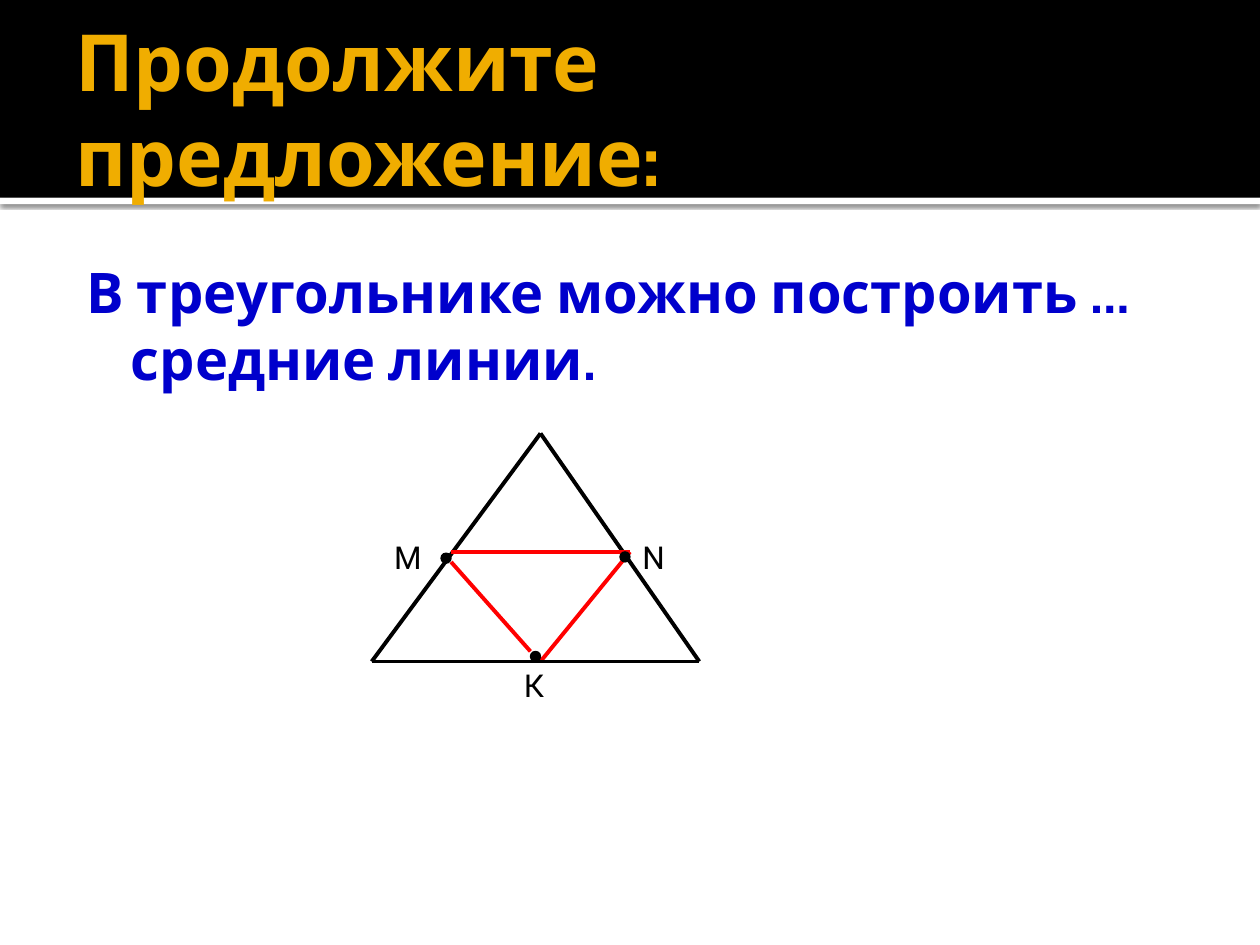
"""Build a slide about the midlines of a triangle."""
from dataclasses import dataclass
from typing import Any

import pptx
import pptx.dml.color
import pptx.enum.shapes
import pptx.enum.text
import pptx.oxml
import pptx.oxml.ns
import pptx.util


@dataclass(frozen=True)
class Theme:
    black: str = "000000"
    white: str = "FFFFFF"
    gold: str = "F0AD00"
    blue: str = "0000CC"
    red: str = "FF0000"
    heading_font: str = "Cabin"
    label_font: str = "Roboto"
    title_size: float = 45
    body_size: float = 32
    label_size: float = 18
    side_width: float = 2.25
    dot_width: float = 0.75


@dataclass(frozen=True)
class Box:
    column: float
    row: float
    columns: float
    rows: float


@dataclass(frozen=True)
class Segment:
    start: tuple[float, float]
    end: tuple[float, float]
    color: str


@dataclass(frozen=True)
class Vertex:
    name: str
    label: tuple[float, float]
    dot: tuple[float, float]


THEME = Theme()
COLUMNS, ROWS = 100, 75
SLIDE_WIDTH, SLIDE_HEIGHT = pptx.util.Inches(10), pptx.util.Inches(7.5)
BAND_ROWS = 15.7
LABEL_COLUMNS, LABEL_ROWS, DOT_SIZE = 3.1, 4, 0.8
MARGINS = (0.1, 0.05, 0.1, 0.05)

APEX, LEFT, RIGHT = (42.9, 34.4), (29.5, 52.5), (55.5, 52.5)
SIDES = [Segment(*ends, THEME.black) for ends in ((APEX, LEFT), (APEX, RIGHT), (LEFT, RIGHT))]
LOWER_MIDLINES = [
    Segment((35.8, 44.6), (42.1, 51.7), THEME.red),
    Segment((42.9, 52.5), (50, 43.8), THEME.red),
]
UPPER_MIDLINE = Segment((35.8, 43.8), (50, 43.8), THEME.red)
MIDPOINTS = [
    Vertex("M", (30.3, 42.2), (35, 43.9)),
    Vertex("N", (50, 42.2), (49.2, 43.8)),
    Vertex("К", (40.6, 52.4), (42.1, 51.7)),
]


def across(columns: float) -> int:
    return round(SLIDE_WIDTH * columns / COLUMNS)


def down(rows: float) -> int:
    return round(SLIDE_HEIGHT * rows / ROWS)


def place(box: Box) -> tuple[int, int, int, int]:
    return across(box.column), down(box.row), across(box.columns), down(box.rows)


def rgb(color: str) -> pptx.dml.color.RGBColor:
    return pptx.dml.color.RGBColor.from_string(color)


def add_filled(shapes: Any, kind: Any, box: Box, color: str, outline: float = 0) -> Any:
    shape = shapes.add_shape(kind, *place(box))
    shape.shadow.inherit = False
    shape.fill.solid()
    shape.fill.fore_color.rgb = rgb(color)
    if outline:
        shape.line.color.rgb = rgb(color)
        shape.line.width = pptx.util.Pt(outline)
    else:
        shape.line.fill.background()
    return shape


def cast_shadow(shape: Any) -> None:
    effects = shape._element.spPr.find(pptx.oxml.ns.qn("a:effectLst"))
    effects.append(pptx.oxml.parse_xml(
        f'<a:outerShdw {pptx.oxml.ns.nsdecls("a")} blurRad="31750" dist="10160" '
        'dir="5400000" algn="tl" rotWithShape="0">'
        f'<a:srgbClr val="{THEME.black}"><a:alpha val="60000"/></a:srgbClr></a:outerShdw>'
    ))


def add_segment(shapes: Any, segment: Segment) -> None:
    (start_column, start_row), (end_column, end_row) = segment.start, segment.end
    connector = shapes.add_connector(
        pptx.enum.shapes.MSO_CONNECTOR.STRAIGHT,
        across(start_column), down(start_row), across(end_column), down(end_row),
    )
    connector.line.color.rgb = rgb(segment.color)
    connector.line.width = pptx.util.Pt(THEME.side_width)
    connector._element.spPr.append(
        pptx.oxml.parse_xml(f'<a:effectLst {pptx.oxml.ns.nsdecls("a")}/>'))


def add_text(shapes: Any, box: Box, text: str, font: str, size: float, color: str,
             bold: bool = False, wrap: bool = True,
             margins: tuple[float, float, float, float] = MARGINS) -> Any:
    frame = shapes.add_textbox(*place(box)).text_frame
    frame.word_wrap = wrap
    (frame.margin_left, frame.margin_top,
     frame.margin_right, frame.margin_bottom) = map(pptx.util.Inches, margins)
    paragraph = frame.paragraphs[0]
    paragraph.text = text
    paragraph.font.name = font
    paragraph.font.size = pptx.util.Pt(size)
    paragraph.font.bold = bold
    paragraph.font.color.rgb = rgb(color)
    return frame


def add_vertex(shapes: Any, vertex: Vertex) -> None:
    members = shapes.add_group_shape().shapes
    add_text(members, Box(*vertex.label, LABEL_COLUMNS, LABEL_ROWS), vertex.name,
             THEME.label_font, THEME.label_size, THEME.black, wrap=False)
    add_filled(members, pptx.enum.shapes.MSO_SHAPE.FLOWCHART_CONNECTOR,
               Box(*vertex.dot, DOT_SIZE, DOT_SIZE), THEME.black, THEME.dot_width)


def main() -> None:
    presentation = pptx.Presentation()
    presentation.slide_width, presentation.slide_height = SLIDE_WIDTH, SLIDE_HEIGHT
    shapes = presentation.slides.add_slide(presentation.slide_layouts[6]).shapes

    rectangle = pptx.enum.shapes.MSO_SHAPE.RECTANGLE
    cast_shadow(add_filled(shapes, rectangle, Box(0, BAND_ROWS, COLUMNS, 0.5), THEME.white))
    add_filled(shapes, rectangle, Box(0, 0, COLUMNS, BAND_ROWS), THEME.black)

    for segment in LOWER_MIDLINES:
        add_segment(shapes, segment)

    title = add_text(shapes, Box(5, 1.7, 90, 13.7), "Продолжите предложение:",
                     THEME.heading_font, THEME.title_size, THEME.gold, bold=True,
                     margins=(0.1, 0.05, 0.05, 0.05))
    title.vertical_anchor = pptx.enum.text.MSO_ANCHOR.MIDDLE
    body = add_text(shapes, Box(5, 19.4, 90, 50.6),
                    "В треугольнике можно построить … средние линии.",
                    THEME.heading_font, THEME.body_size, THEME.blue, bold=True,
                    margins=(0.06, 0.1, 0.1, 0.05))
    properties = body.paragraphs[0]._p.get_or_add_pPr()
    properties.set("marL", str(pptx.util.Inches(0.48)))
    properties.set("indent", str(pptx.util.Inches(-0.35)))

    triangle = shapes.add_group_shape().shapes
    for side in SIDES:
        add_segment(triangle, side)
    add_segment(shapes, UPPER_MIDLINE)
    for vertex in MIDPOINTS:
        add_vertex(shapes, vertex)

    presentation.save("out.pptx")


if __name__ == "__main__":
    main()
